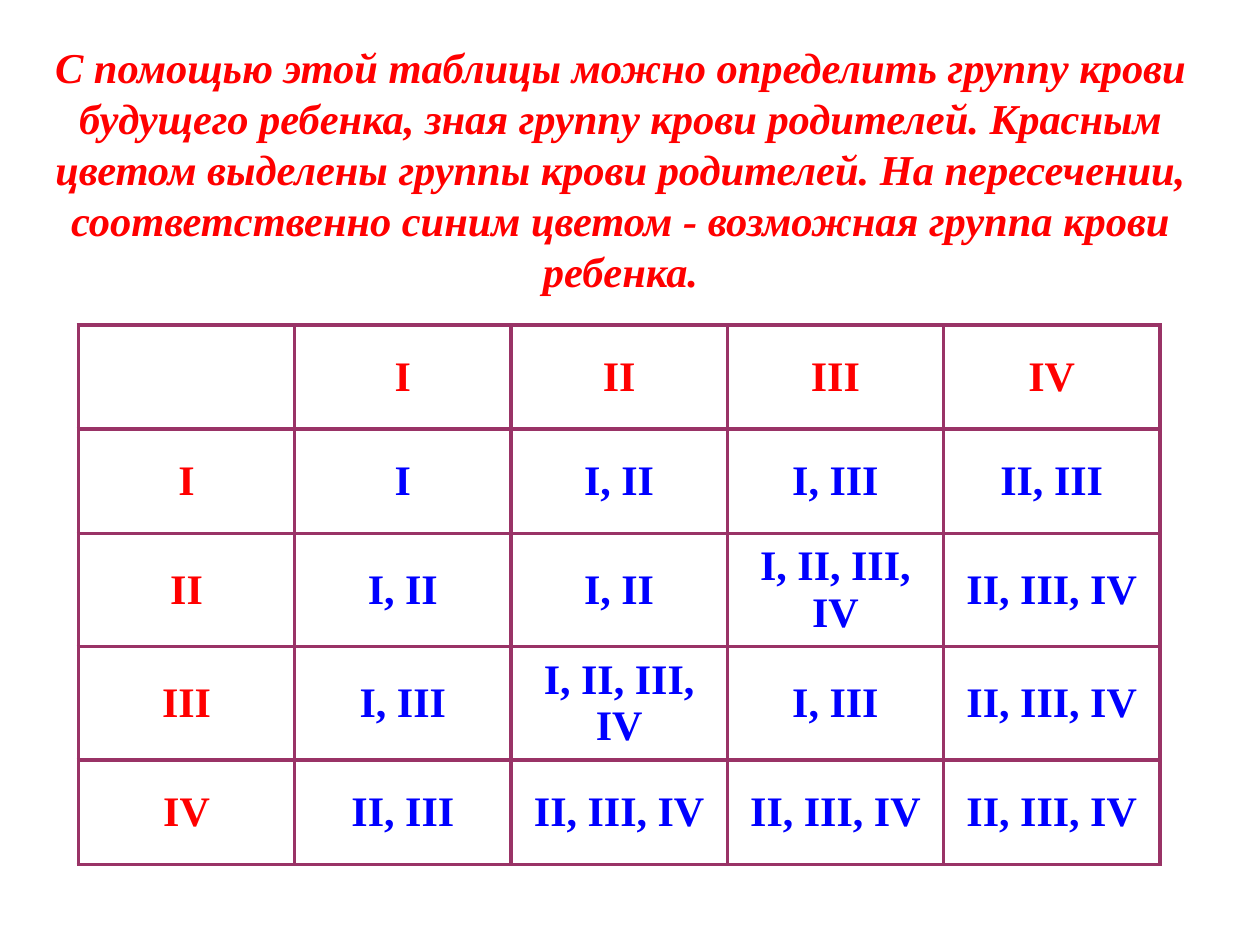
import pptx
import pptx.util
import pptx.dml.color
import pptx.enum.text
import pptx.oxml
import pptx.oxml.ns
from pptx.util import Cm

COLORS = {"parent": "FF0000", "child": "0000FF", "border": "993366", "paper": "FFFFFF"}
FONT = "Times New Roman"
EXPLANATION = (
    "С помощью этой таблицы можно определить группу крови будущего ребенка, "
    "зная группу крови родителей. Красным цветом выделены группы крови родителей. "
    "На пересечении, соответственно синим цветом - возможная группа крови ребенка."
)
BLOOD_GROUPS = [
    ["", "I", "II", "III", "IV"],
    ["I", "I", "I, II", "I, III", "II, III"],
    ["II", "I, II", "I, II", "I, II, III, IV", "II, III, IV"],
    ["III", "I, III", "I, II, III, IV", "I, III", "II, III, IV"],
    ["IV", "II, III", "II, III, IV", "II, III, IV", "II, III, IV"],
]
ROW_SHARES = [2.1, 2.1, 2.28, 2.28, 2.1]


def rgb(role):
    """Return the colour that belongs to a role."""
    return pptx.dml.color.RGBColor.from_string(COLORS[role])


def style_text(frame, size, role, italic=False):
    """Centre the text and format its runs in bold."""
    frame.word_wrap = True
    for paragraph in frame.paragraphs:
        paragraph.alignment = pptx.enum.text.PP_ALIGN.CENTER
        for run in paragraph.runs:
            run.font.name = FONT
            run.font.size = pptx.util.Pt(size)
            run.font.bold = True
            run.font.italic = italic
            run.font.color.rgb = rgb(role)


def add_borders(cell, width):
    """Draw a solid line on all four sides of a cell."""
    properties = cell._tc.get_or_add_tcPr()
    for index, side in enumerate(("lnL", "lnR", "lnT", "lnB")):
        line = pptx.oxml.parse_xml(
            f'<a:{side} {pptx.oxml.ns.nsdecls("a")} w="{pptx.util.Pt(width)}">'
            f'<a:solidFill><a:srgbClr val="{COLORS["border"]}"/></a:solidFill></a:{side}>'
        )
        properties.insert(index, line)


def add_explanation(slide, left, top, width, height):
    """Place the explanation of the table in its box."""
    frame = slide.shapes.add_textbox(left, top, width, height).text_frame
    frame.text = EXPLANATION
    frame.vertical_anchor = pptx.enum.text.MSO_ANCHOR.MIDDLE
    frame.margin_left = frame.margin_right = Cm(0.2)
    frame.margin_top = frame.margin_bottom = 0
    style_text(frame, 24.3, "parent", italic=True)
    frame.paragraphs[0].line_spacing = pptx.util.Pt(29.15)


def add_inheritance_table(slide, left, top, width, height):
    """Place the table of parents' and children's blood groups in its box."""
    columns = len(BLOOD_GROUPS[0])
    table = slide.shapes.add_table(
        len(BLOOD_GROUPS), columns, left, top, width, height
    ).table
    for column in table.columns:
        column.width = width // columns
    for row, share in zip(table.rows, ROW_SHARES):
        row.height = int(height * share / sum(ROW_SHARES))
    for row_index, groups in enumerate(BLOOD_GROUPS):
        for column_index, group in enumerate(groups):
            cell = table.cell(row_index, column_index)
            cell.text = group
            cell.vertical_anchor = pptx.enum.text.MSO_ANCHOR.MIDDLE
            cell.fill.solid()
            cell.fill.fore_color.rgb = rgb("paper")
            role = "child" if row_index and column_index else "parent"
            style_text(cell.text_frame, 24, role)
            add_borders(cell, 2.25)


def main():
    """Build the slide and save it."""
    presentation = pptx.Presentation()
    presentation.slide_width = Cm(25.4)
    presentation.slide_height = Cm(19.05)
    slide = presentation.slides.add_slide(presentation.slide_layouts[6])
    add_explanation(slide, Cm(0.79), Cm(0.8), Cm(23.44), Cm(5.2))
    add_inheritance_table(slide, Cm(1.58), Cm(6.55), Cm(21.8), Cm(10.86))
    presentation.save("out.pptx")


if __name__ == "__main__":
    main()
